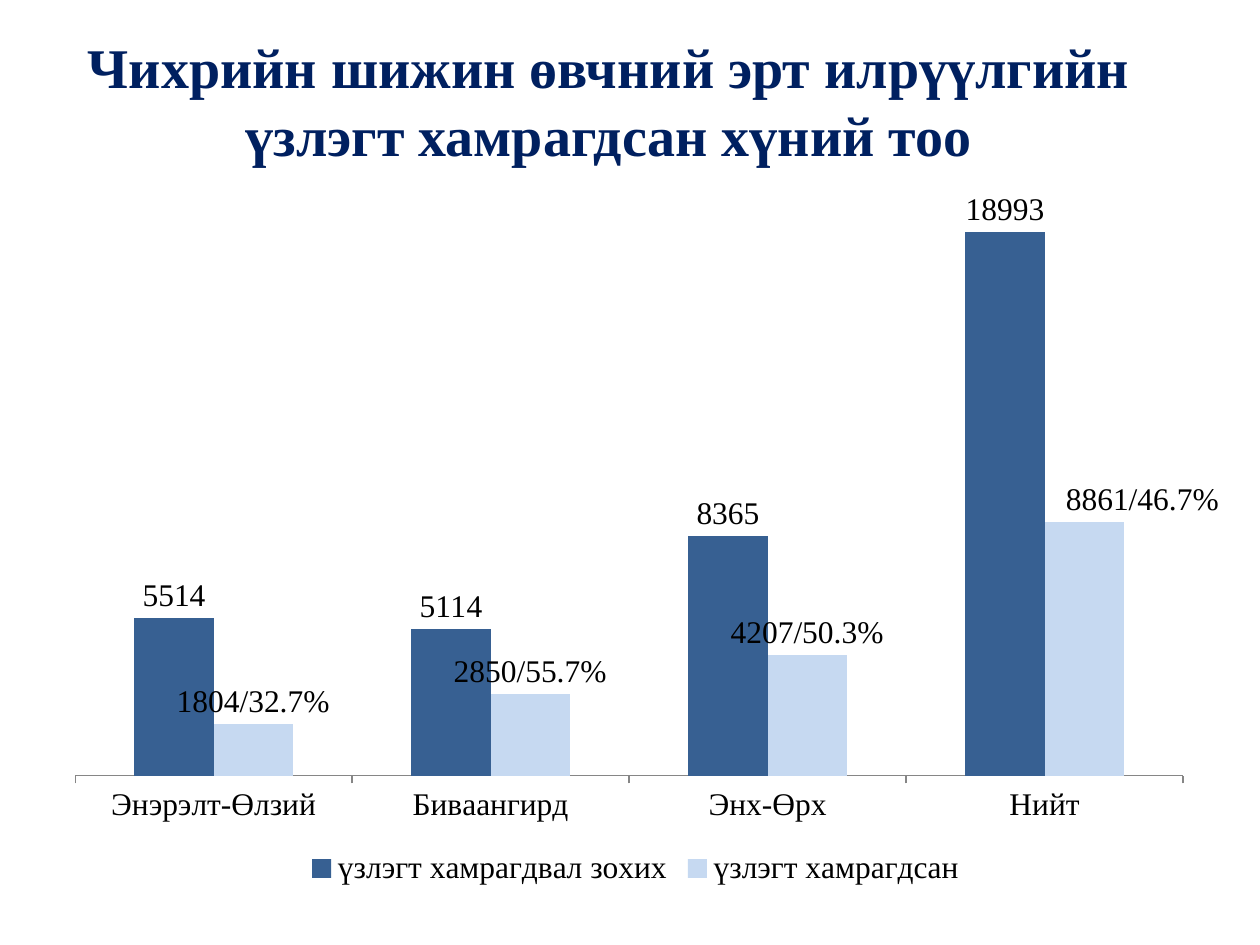
import pptx
import pptx.chart.data
import pptx.dml.color
import pptx.enum.chart
import pptx.enum.text
import pptx.oxml
import pptx.oxml.ns
import pptx.util

PX = pptx.util.Inches(1) // 126
FONT = "Times New Roman"
NAVY = pptx.dml.color.RGBColor(0x00, 0x20, 0x60)
BLACK = pptx.dml.color.RGBColor(0x00, 0x00, 0x00)
BLUE = pptx.dml.color.RGBColor(0x37, 0x60, 0x92)
PALE = pptx.dml.color.RGBColor(0xC6, 0xD9, 0xF1)
GRAY = pptx.dml.color.RGBColor(0x86, 0x86, 0x86)

TITLE = "Чихрийн шижин өвчний эрт илрүүлгийн үзлэгт хамрагдсан хүний тоо"
TITLE_FORMAT = {"name": FONT, "size": pptx.util.Pt(32), "bold": True}
CHART_FORMAT = {"name": FONT, "size": pptx.util.Pt(18), "bold": False}
CATEGORIES = ["Энэрэлт-Өлзий", "Биваангирд", "Энх-Өрх", "Нийт"]
SERIES = [
    ("үзлэгт хамрагдвал зохих", [5514, 5114, 8365, 18993], BLUE),
    ("үзлэгт хамрагдсан", [1804, 2850, 4207, 8861], PALE),
]
SCREENED_SHARES = ["32.7%", "55.7%", "50.3%", "46.7%"]

TITLE_BOX = (42, 21, 1134, 158)
CHART_BOX = (53, 189, 1166, 703)
PLOT_BOX = (75, 203, 1109, 573)
LAST_LABEL_SHIFT = 57


def scaled(lengths):
    return [length * PX for length in lengths]


def style(font, values, color):
    for name, value in values.items():
        setattr(font, name, value)
    font.color.rgb = color


def manual_layout(values):
    """Return a c:layout element holding the given tags and values."""
    tags = "".join(f'<c:{tag} val="{value}"/>' for tag, value in values.items())
    namespace = pptx.oxml.ns.nsdecls("c")
    return pptx.oxml.parse_xml(
        f"<c:layout {namespace}><c:manualLayout>{tags}</c:manualLayout></c:layout>")


def place_plot(chart):
    left, top, width, height = CHART_BOX
    plot_left, plot_top, plot_width, plot_height = PLOT_BOX
    plot_area = chart._chartSpace.chart.plotArea
    for layout in plot_area.findall(pptx.oxml.ns.qn("c:layout")):
        plot_area.remove(layout)
    plot_area.insert(0, manual_layout({
        "layoutTarget": "inner", "xMode": "edge", "yMode": "edge",
        "x": round((plot_left - left) / width, 3),
        "y": round((plot_top - top) / height, 3),
        "w": round(plot_width / width, 3),
        "h": round(plot_height / height, 3)}))


def add_title(slide):
    box = slide.shapes.add_textbox(*scaled(TITLE_BOX))
    frame = box.text_frame
    frame.word_wrap = True
    frame.vertical_anchor = pptx.enum.text.MSO_ANCHOR.MIDDLE
    para = frame.paragraphs[0]
    para.alignment = pptx.enum.text.PP_ALIGN.CENTER
    span = para.add_run()
    span.text = TITLE
    style(span.font, TITLE_FORMAT, NAVY)


def label_shares(series):
    """Label each column with its count and its share of those due."""
    outside = pptx.enum.chart.XL_LABEL_POSITION.OUTSIDE_END
    for index, (count, share) in enumerate(zip(series.values, SCREENED_SHARES)):
        label = series.points[index].data_label
        span = label.text_frame.paragraphs[0].add_run()
        span.text = f"{count:.0f}/{share}"
        style(span.font, CHART_FORMAT, BLACK)
        label.position = outside
    last = series.data_labels._element.findall(pptx.oxml.ns.qn("c:dLbl"))[-1]
    shift = round(LAST_LABEL_SHIFT / CHART_BOX[2], 2)
    last.insert(1, manual_layout({"x": shift, "y": 0}))


def add_columns(slide):
    data = pptx.chart.data.CategoryChartData()
    data.categories = CATEGORIES
    for name, values, _ in SERIES:
        data.add_series(name, values)
    kind = pptx.enum.chart.XL_CHART_TYPE.COLUMN_CLUSTERED
    chart = slide.shapes.add_chart(kind, *scaled(CHART_BOX), data).chart
    style(chart.font, CHART_FORMAT, BLACK)
    chart.has_title = False
    chart.has_legend = True
    chart.legend.position = pptx.enum.chart.XL_LEGEND_POSITION.BOTTOM
    chart.legend.include_in_layout = False

    chart.value_axis.visible = False
    chart.value_axis.has_major_gridlines = False
    chart.value_axis.minimum_scale = 0
    chart.value_axis.maximum_scale = 20000
    chart.category_axis.format.line.color.rgb = GRAY
    chart.category_axis.major_tick_mark = pptx.enum.chart.XL_TICK_MARK.OUTSIDE

    plot = chart.plots[0]
    plot.gap_width = 150
    plot.overlap = 0
    plot.vary_by_categories = False
    for series, (_, _, color) in zip(plot.series, SERIES):
        series.format.fill.solid()
        series.format.fill.fore_color.rgb = color
        series.data_labels.show_value = True
        series.data_labels.position = pptx.enum.chart.XL_LABEL_POSITION.OUTSIDE_END
        style(series.data_labels.font, CHART_FORMAT, BLACK)
    label_shares(plot.series[1])
    place_plot(chart)


def main():
    deck = pptx.Presentation()
    deck.slide_width, deck.slide_height = scaled((1260, 945))
    slide = deck.slides.add_slide(deck.slide_layouts[6])
    add_title(slide)
    add_columns(slide)
    deck.save("out.pptx")


if __name__ == "__main__":
    main()
